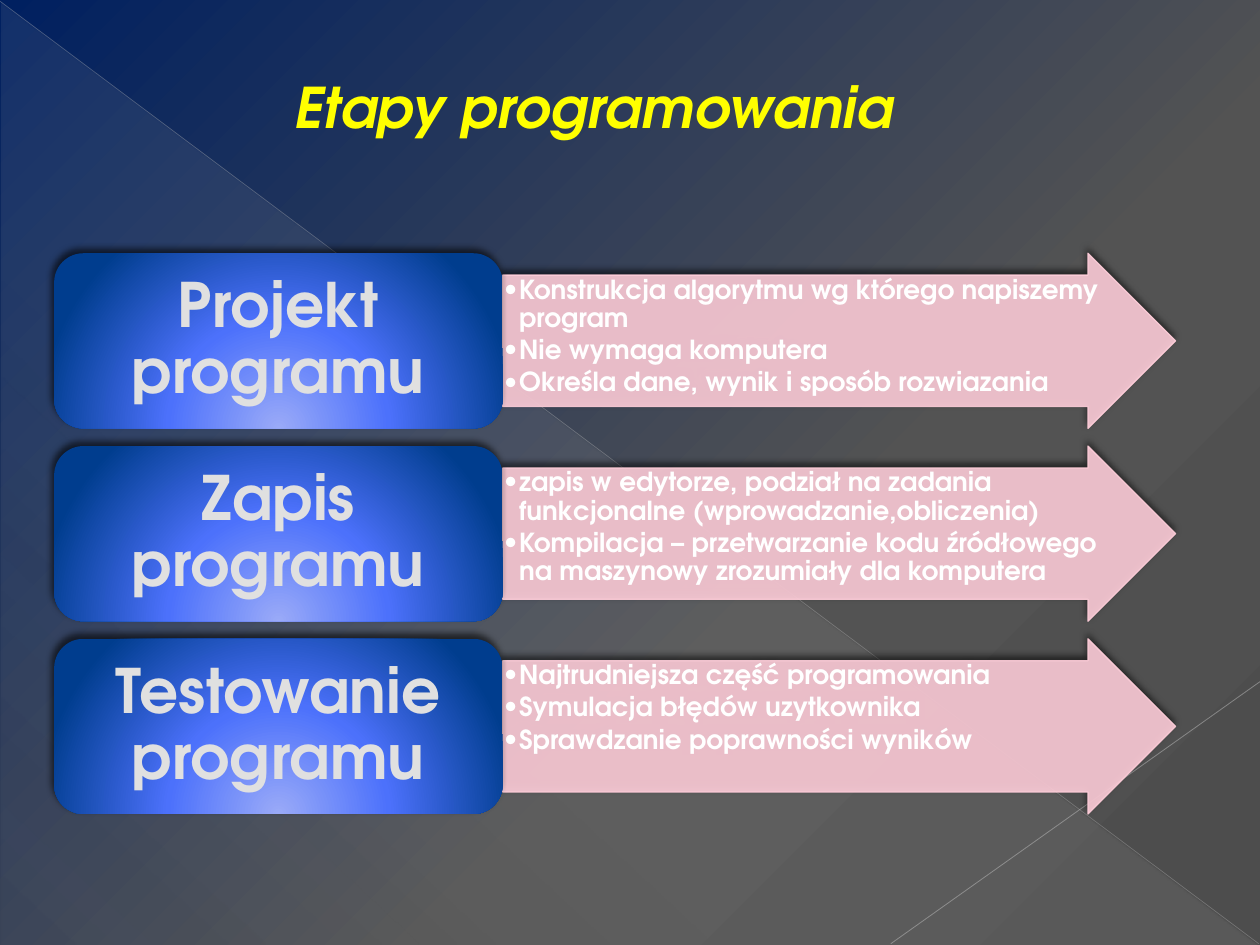
from lxml.etree import SubElement
from pptx import Presentation
from pptx.dml.color import RGBColor
from pptx.enum.shapes import MSO_CONNECTOR, MSO_SHAPE
from pptx.enum.text import MSO_ANCHOR, PP_ALIGN
from pptx.oxml import parse_xml
from pptx.oxml.ns import nsdecls, qn
from pptx.util import Inches, Pt

FONT = "TeX Gyre Adventor"
BLACK = RGBColor(0x00, 0x00, 0x00)
WHITE = RGBColor(0xFF, 0xFF, 0xFF)
YELLOW = RGBColor(0xFF, 0xFF, 0x00)
PINK = RGBColor(0xFF, 0xCE, 0xDA)
PALE_GREY = RGBColor(0xE0, 0xE0, 0xE0)
VEIL_GREY = RGBColor(0xD2, 0xD2, 0xD2)
LONG_LINE_GREY = RGBColor(0xBF, 0xBF, 0xBF)
SHORT_LINE_GREY = RGBColor(0xC6, 0xC6, 0xC6)
NAVY = RGBColor(0x00, 0x20, 0x60)
DARK_GREY = RGBColor(0x53, 0x53, 0x53)
DARKER_GREY = RGBColor(0x4D, 0x4D, 0x4D)
LIGHT_BLUE = RGBColor(0x9A, 0xAA, 0xF8)
BRIGHT_BLUE = RGBColor(0x4C, 0x71, 0xFB)
DEEP_BLUE = RGBColor(0x00, 0x3D, 0x8E)

BACKGROUND_STOPS = [(0, NAVY, 100), (62, DARK_GREY, 100), (100, DARKER_GREY, 100)]
VEIL_STOPS = [(0, VEIL_GREY, 10), (70, VEIL_GREY, 8), (100, VEIL_GREY, 1)]
STAGE_STOPS = [(0, LIGHT_BLUE, 100), (46, BRIGHT_BLUE, 100), (100, DEEP_BLUE, 100)]
GLOW_FROM_BELOW = (
    '<a:path path="circle">'
    '<a:fillToRect l="50000" t="155000" r="50000" b="-55000"/></a:path>'
)

STAGES = [
    ("Projekt programu", [
        "Konstrukcja algorytmu wg którego napiszemy program",
        "Nie wymaga komputera",
        "Określa dane, wynik i sposób rozwiazania",
    ]),
    ("Zapis programu", [
        "zapis w edytorze, podział na zadania funkcjonalne (wprowadzanie,obliczenia)",
        "Kompilacja – przetwarzanie kodu źródłowego na maszynowy zrozumiały dla komputera",
    ]),
    ("Testowanie programu", [
        "Najtrudniejsza część programowania",
        "Symulacja błędów uzytkownika",
        "Sprawdzanie poprawności wyników",
    ]),
]
FIRST_TOP, STAGE_STEP, STAGE_HEIGHT = 2.01, 1.53, 1.39
LABEL_LEFT, LABEL_WIDTH, ARROW_WIDTH = 0.43, 3.56, 5.34


def linear(degrees):
    """Return the XML of a linear gradient direction."""
    return f'<a:lin ang="{degrees * 60000}" scaled="0"/>'


def paint_gradient(properties, stops, direction):
    """Replace a solid fill with a gradient."""
    stop_list = "".join(
        f'<a:gs pos="{position * 1000}"><a:srgbClr val="{color}">'
        f'<a:alpha val="{opacity * 1000}"/></a:srgbClr></a:gs>'
        for position, color, opacity in stops
    )
    gradient = parse_xml(
        f'<a:gradFill {nsdecls("a")} rotWithShape="1">'
        f"<a:gsLst>{stop_list}</a:gsLst>{direction}</a:gradFill>"
    )
    properties.replace(properties.find(qn("a:solidFill")), gradient)


def set_opacity(parent, percent):
    """Make the solid colour under an element partly transparent."""
    color = parent.find(qn("a:solidFill")).find(qn("a:srgbClr"))
    SubElement(color, qn("a:alpha"), val=str(percent * 1000))


def add_shadow(shape):
    """Give a shape a soft shadow above its upper edge."""
    effects = shape._element.spPr.find(qn("a:effectLst"))
    effects.append(parse_xml(
        f'<a:outerShdw {nsdecls("a")} blurRad="{Pt(4)}" dist="{Pt(3)}" '
        f'dir="{245 * 60000}" rotWithShape="0"><a:srgbClr val="{BLACK}">'
        '<a:alpha val="60000"/></a:srgbClr></a:outerShdw>'
    ))


def add_filled_shape(page, kind, left, top, width, height, color):
    """Add a plain filled shape without outline or shadow."""
    shape = page.shapes.add_shape(
        kind, Inches(left), Inches(top), Inches(width), Inches(height))
    shape.shadow.inherit = False
    shape.fill.solid()
    shape.fill.fore_color.rgb = color
    shape.line.fill.background()
    return shape


def add_thin_line(page, start, end, color, width, opacity):
    """Add a translucent hairline between two points."""
    line = page.shapes.add_connector(
        MSO_CONNECTOR.STRAIGHT, *(Inches(value) for value in start + end))
    line.line.color.rgb = color
    line.line.width = Pt(width)
    properties = line._element.spPr
    set_opacity(properties.find(qn("a:ln")), opacity)
    SubElement(properties, qn("a:effectLst"))


def add_span(paragraph, text, size, color):
    """Add one bold run and return it."""
    span = paragraph.add_run()
    span.text = text
    span.font.name = FONT
    span.font.size = Pt(size)
    span.font.bold = True
    span.font.color.rgb = color
    return span


def set_margins(frame, horizontal, vertical):
    """Set the inner margins of a text frame in inches."""
    frame.margin_left = frame.margin_right = Inches(horizontal)
    frame.margin_top = frame.margin_bottom = Inches(vertical)


def add_title(page):
    """Add the slide title."""
    box = page.shapes.add_textbox(
        Inches(2.24), Inches(0.53), Inches(5.43), Inches(0.64))
    box.text_frame.word_wrap = True
    span = add_span(box.text_frame.paragraphs[0], "Etapy programowania", 32, YELLOW)
    span.font.italic = True


def add_bullet(paragraph, text):
    """Fill a paragraph as a bulleted item with a hanging indent."""
    properties = paragraph._p.get_or_add_pPr()
    properties.set("marL", str(Inches(0.12)))
    properties.set("indent", str(Inches(-0.12)))
    SubElement(properties, qn("a:buFont"), typeface=FONT)
    SubElement(properties, qn("a:buChar"), char="•")
    paragraph.alignment = PP_ALIGN.LEFT
    paragraph.line_spacing = 0.9
    paragraph.space_after = Pt(2.25)
    add_span(paragraph, text, 15, WHITE)


def add_arrow(page, top, items):
    """Add the arrow that lists the details of a stage."""
    arrow = add_filled_shape(
        page, MSO_SHAPE.RIGHT_ARROW, LABEL_LEFT + LABEL_WIDTH, top,
        ARROW_WIDTH, STAGE_HEIGHT, PINK)
    arrow.adjustments[0], arrow.adjustments[1] = 0.75, 0.5
    arrow.line.color.rgb = PINK
    arrow.line.width = Pt(0.75)
    properties = arrow._element.spPr
    for parent in (properties, properties.find(qn("a:ln"))):
        set_opacity(parent, 90)
    add_shadow(arrow)
    frame = arrow.text_frame
    frame.word_wrap = True
    frame.vertical_anchor = MSO_ANCHOR.TOP
    set_margins(frame, 0.01, 0.01)
    for index, item in enumerate(items):
        add_bullet(frame.add_paragraph() if index else frame.paragraphs[0], item)


def add_label(page, top, name):
    """Add the rounded box that names a stage."""
    label = add_filled_shape(
        page, MSO_SHAPE.ROUNDED_RECTANGLE, LABEL_LEFT, top,
        LABEL_WIDTH, STAGE_HEIGHT, BRIGHT_BLUE)
    paint_gradient(label._element.spPr, STAGE_STOPS, GLOW_FROM_BELOW)
    add_shadow(label)
    frame = label.text_frame
    frame.word_wrap = True
    frame.vertical_anchor = MSO_ANCHOR.MIDDLE
    set_margins(frame, 0.15, 0.07)
    paragraph = frame.paragraphs[0]
    paragraph.alignment = PP_ALIGN.CENTER
    paragraph.line_spacing = 0.9
    paragraph.space_after = Pt(12.25)
    add_span(paragraph, name, 35, PALE_GREY)


def add_backdrop(page):
    """Paint the background with its veil and hairlines."""
    page.background.fill.solid()
    page.background.fill.fore_color.rgb = NAVY
    properties = page._element.find(".//" + qn("p:bgPr"))
    paint_gradient(properties, BACKGROUND_STOPS, linear(45))
    veil = add_filled_shape(
        page, MSO_SHAPE.RIGHT_TRIANGLE, 0.01, 0.02, 9.98, 7.48, VEIL_GREY)
    paint_gradient(veil._element.spPr, VEIL_STOPS, linear(133))
    add_thin_line(page, (0, 0.01), (9.99, 7.49), LONG_LINE_GREY, 0.39, 35)
    add_thin_line(page, (10, 5.41), (7.07, 7.49), SHORT_LINE_GREY, 0.47, 45)


def main():
    """Build the slide and save it."""
    deck = Presentation()
    deck.slide_width, deck.slide_height = Inches(10), Inches(7.5)
    page = deck.slides.add_slide(deck.slide_layouts[6])
    add_backdrop(page)
    add_title(page)
    for index, (name, items) in enumerate(STAGES):
        top = FIRST_TOP + index * STAGE_STEP
        add_arrow(page, top, items)
        add_label(page, top, name)
    deck.save("out.pptx")


if __name__ == "__main__":
    main()
